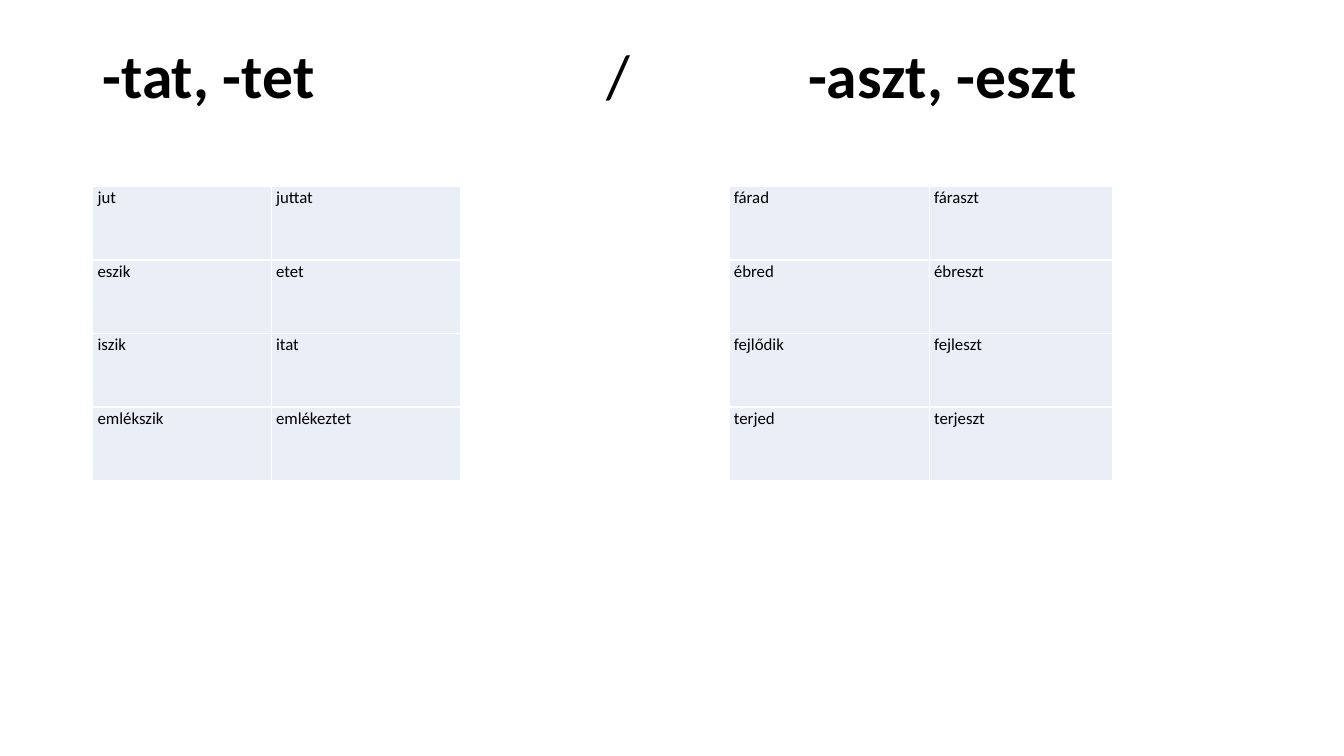
from dataclasses import dataclass

from lxml.etree import SubElement
from pptx import Presentation
from pptx.dml.color import RGBColor
from pptx.enum.text import MSO_ANCHOR, MSO_AUTO_SIZE, PP_ALIGN
from pptx.oxml.ns import qn
from pptx.slide import Slide
from pptx.table import _Cell
from pptx.text.text import _Paragraph
from pptx.util import Pt

TOP = MSO_ANCHOR.TOP
FIXED = MSO_AUTO_SIZE.NONE
LEFT = PP_ALIGN.LEFT
COLORS = {"text": "000000", "cell": "EAEFF7", "edge": "FFFFFF"}
FACE = "Calibri"
EDGES = ("a:lnL", "a:lnR", "a:lnT", "a:lnB")
TABS = (360, 504)
GRID_TOP = 133.25
ROW = 52.5


@dataclass(frozen=True)
class Grid:
    left: float
    cols: tuple[float, ...]
    rows: tuple[tuple[str, ...], ...]


@dataclass(frozen=True)
class Part:
    text: str
    bold: bool


TITLE = (
    Part("-tat, -tet\t", True),
    Part("/\t", False),
    Part("-aszt, -eszt", True),
)
GRIDS = (
    Grid(66.25, (127.5, 135.5), (
        ("jut", "juttat"),
        ("eszik", "etet"),
        ("iszik", "itat"),
        ("emlékszik", "emlékeztet"),
    )),
    Grid(520.75, (143, 131), (
        ("fárad", "fáraszt"),
        ("ébred", "ébreszt"),
        ("fejlődik", "fejleszt"),
        ("terjed", "terjeszt"),
    )),
)


def apply(item: object, form: dict[str, object]) -> None:
    for name, value in form.items():
        setattr(item, name, value)


def add_run(para: _Paragraph, text: str, size: float, bold: bool = False) -> None:
    run = para.add_run()
    run.text = text
    apply(run.font, {"name": FACE, "size": Pt(size), "bold": bold})
    run.font.color.rgb = RGBColor.from_string(COLORS["text"])


def draw_title(slide: Slide) -> None:
    title = slide.shapes.title
    apply(title, {"left": Pt(66), "top": Pt(28.75),
                  "width": Pt(828), "height": Pt(104.5)})
    frame = title.text_frame
    apply(frame, {"vertical_anchor": TOP, "auto_size": FIXED, "word_wrap": True})
    para = frame.paragraphs[0]
    apply(para, {"alignment": LEFT, "line_spacing": 0.9})
    stops = SubElement(para._p.get_or_add_pPr(), qn("a:tabLst"))
    for stop in TABS:
        SubElement(stops, qn("a:tab"), pos=str(Pt(stop)), algn="l")
    for part in TITLE:
        add_run(para, part.text, 44, part.bold)


def draw_cell(cell: _Cell, text: str) -> None:
    apply(cell, {"margin_left": Pt(3.5), "margin_right": Pt(3.5),
                 "margin_top": 0, "margin_bottom": 0, "vertical_anchor": TOP})
    props = cell._tc.get_or_add_tcPr()
    for edge in EDGES:
        line = SubElement(props, qn(edge), w=str(Pt(1)))
        fill = SubElement(line, qn("a:solidFill"))
        SubElement(fill, qn("a:srgbClr"), val=COLORS["edge"])
    cell.fill.solid()
    cell.fill.fore_color.rgb = RGBColor.from_string(COLORS["cell"])
    para = cell.text_frame.paragraphs[0]
    para.line_spacing = 1.07
    add_run(para, text, 12)


def draw_grid(slide: Slide, grid: Grid) -> None:
    count = len(grid.rows)
    table = slide.shapes.add_table(
        count, len(grid.cols), Pt(grid.left), Pt(GRID_TOP),
        Pt(sum(grid.cols)), Pt(ROW * count)).table
    apply(table, {"first_row": False, "horz_banding": False})
    for col, width in zip(table.columns, grid.cols):
        col.width = Pt(width)
    for row, words in zip(table.rows, grid.rows):
        row.height = Pt(ROW)
        for cell, word in zip(row.cells, words):
            draw_cell(cell, word)


def main() -> None:
    deck = Presentation()
    apply(deck, {"slide_width": Pt(960), "slide_height": Pt(540)})
    slide = deck.slides.add_slide(deck.slide_layouts[5])
    draw_title(slide)
    for grid in GRIDS:
        draw_grid(slide, grid)
    deck.save("out.pptx")


if __name__ == "__main__":
    main()
